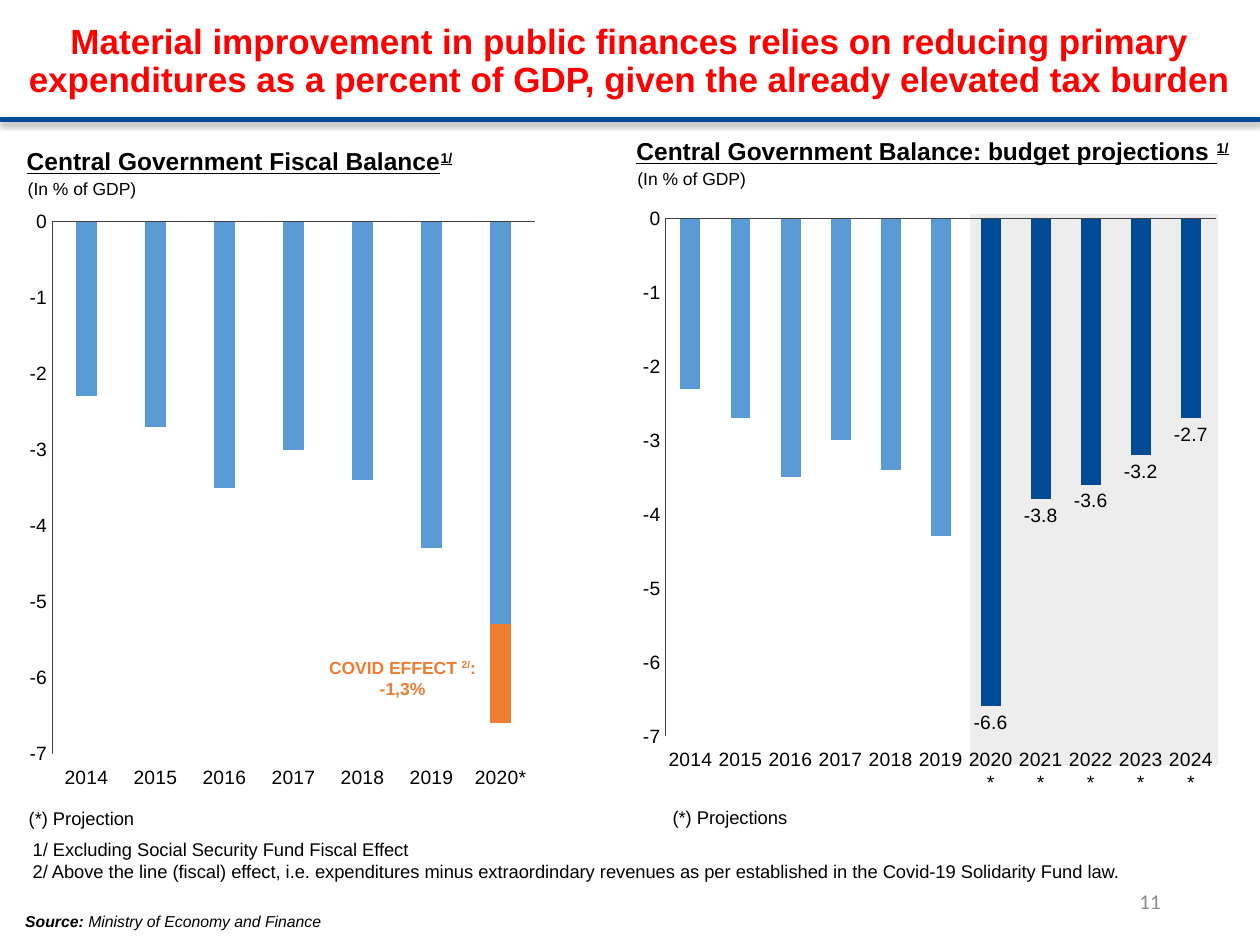
from dataclasses import dataclass

from lxml import etree
from pptx import Presentation
from pptx.chart.data import CategoryChartData
from pptx.dml.color import RGBColor
from pptx.enum.chart import XL_CHART_TYPE, XL_LABEL_POSITION, XL_TICK_LABEL_POSITION, XL_TICK_MARK
from pptx.enum.shapes import MSO_CONNECTOR, MSO_SHAPE
from pptx.enum.text import MSO_ANCHOR, MSO_AUTO_SIZE, PP_ALIGN
from pptx.oxml.ns import qn
from pptx.util import Cm, Pt

CLUSTERED, STACKED = XL_CHART_TYPE.COLUMN_CLUSTERED, XL_CHART_TYPE.COLUMN_STACKED
CENTER, RIGHT = PP_ALIGN.CENTER, PP_ALIGN.RIGHT
TOP, MIDDLE, BOTTOM = MSO_ANCHOR.TOP, MSO_ANCHOR.MIDDLE, MSO_ANCHOR.BOTTOM
NO_TICK, LABELS_LOW = XL_TICK_MARK.NONE, XL_TICK_LABEL_POSITION.LOW
OUTSIDE_END = XL_LABEL_POSITION.OUTSIDE_END

NORMAL_INSETS = (0.25, 0.13, 0.25, 0.13)
TIGHT_INSETS = (0.13, 0.08, 0.13, 0.08)
UNIT_INSETS = (0.15, 0, 0, 0)


@dataclass
class Theme:
    font: str = "Arial"
    number_font: str = "Calibri"
    text: str = "000000"
    title: str = "FF0000"
    navy: str = "004A96"
    blue: str = "5B9BD5"
    orange: str = "ED7D31"
    shade: str = "EDEDED"
    axis: str = "404040"
    muted: str = "8B8B8B"
    title_size: float = 20
    heading_size: float = 14
    number_size: float = 12
    chart_size: float = 11
    note_size: float = 10.5
    small_size: float = 10
    source_size: float = 9


def color(value):
    return RGBColor.from_string(value)


def add_span(para, text, font, size, fill, bold=False, italic=False,
             underline=False, raised=False):
    span = para.add_run()
    span.text = text
    span.font.name, span.font.size = font, Pt(size)
    span.font.color.rgb = color(fill)
    span.font.bold, span.font.italic, span.font.underline = bold, italic, underline
    if raised:
        span.font._element.set("baseline", "30000")


class Page:
    """Holds the theme and the current slide."""

    def __init__(self, deck, theme):
        self.theme = theme
        self.slide = deck.slides.add_slide(deck.slide_layouts[5])
        self.shapes = self.slide.shapes

    def fill_text(self, box, paras, size, fill=None, font=None, align=None,
                  anchor=TOP, insets=NORMAL_INSETS, spacing=None, before=0,
                  hanging=0, **style):
        """Each paragraph is a list of (text, style changes) pairs."""
        frame = box.text_frame
        frame.word_wrap, frame.auto_size = True, MSO_AUTO_SIZE.NONE
        frame.vertical_anchor = anchor
        (frame.margin_left, frame.margin_top,
         frame.margin_right, frame.margin_bottom) = map(Cm, insets)
        for index, spans in enumerate(paras):
            para = frame.add_paragraph() if index else frame.paragraphs[0]
            para.alignment, para.line_spacing = align, spacing
            para.space_before = Pt(before)
            if hanging:
                properties = para._p.get_or_add_pPr()
                properties.set("marL", str(Cm(hanging)))
                properties.set("indent", str(-Cm(hanging)))
            for text, changes in spans:
                add_span(para, text, font or self.theme.font, size,
                         fill or self.theme.text, **{**style, **changes})

    def title(self, text, *place):
        box = self.shapes.title
        box.left, box.top, box.width, box.height = map(Cm, place)
        self.fill_text(box, [[(text, {})]], self.theme.title_size, self.theme.title,
                       align=CENTER, anchor=MIDDLE, spacing=0.9, bold=True)

    def text(self, place, paras, size, **style):
        self.fill_text(self.shapes.add_textbox(*map(Cm, place)), paras, size, **style)

    def panel(self, *place, fill):
        box = self.shapes.add_shape(MSO_SHAPE.RECTANGLE, *map(Cm, place))
        box.shadow.inherit = False
        box.fill.solid()
        box.fill.fore_color.rgb = color(fill)
        box.line.fill.background()

    def rule(self, top, width):
        line = self.shapes.add_connector(MSO_CONNECTOR.STRAIGHT, 0, Cm(top), Cm(width), Cm(top))
        line.line.color.rgb, line.line.width = color(self.theme.navy), Pt(3)
        effects = etree.SubElement(line._element.spPr, qn("a:effectLst"))
        shadow = etree.SubElement(effects, qn("a:outerShdw"), blurRad=str(Pt(3.1)),
                                  dist=str(Pt(1.8)), dir="5400000", rotWithShape="0")
        shade = etree.SubElement(shadow, qn("a:srgbClr"), val="000000")
        etree.SubElement(shade, qn("a:alpha"), val="35000")

    def columns(self, place, kind, categories, series, gap, overlap, plot_area):
        """Series holds (values, colour) pairs; plot_area holds shares of the frame."""
        data = CategoryChartData()
        data.categories = categories
        for number, (values, _) in enumerate(series, 1):
            data.add_series(f"Series {number}", values)
        chart = self.shapes.add_chart(kind, *map(Cm, place), data).chart
        chart.has_legend = chart.has_title = False
        chart.font.name, chart.font.size = self.theme.font, Pt(self.theme.chart_size)
        chart.font.color.rgb = color(self.theme.text)
        plot = chart.plots[0]
        plot.gap_width, plot.overlap, plot.vary_by_categories = gap, overlap, False
        for bars, (_, fill) in zip(plot.series, series):
            bars.invert_if_negative = False
            bars.format.fill.solid()
            bars.format.fill.fore_color.rgb = color(fill)

        # Axes
        for axis, width in ((chart.category_axis, 0.75), (chart.value_axis, 0.5)):
            axis.major_tick_mark = axis.minor_tick_mark = NO_TICK
            axis.has_major_gridlines = False
            axis.format.line.color.rgb, axis.format.line.width = color(self.theme.axis), Pt(width)
        chart.category_axis.tick_label_position = LABELS_LOW
        scale = chart.value_axis
        scale.minimum_scale, scale.maximum_scale, scale.major_unit = -7, 0, 1
        scale.tick_labels.number_format = "General"
        scale.tick_labels.number_format_is_linked = False

        # Fixed plot area
        area = chart._chartSpace.chart.plotArea
        for old in area.findall(qn("c:layout")):
            area.remove(old)
        layout = etree.Element(qn("c:layout"))
        area.insert(0, layout)
        manual = etree.SubElement(layout, qn("c:manualLayout"))
        settings = [("layoutTarget", "inner"), ("xMode", "edge"), ("yMode", "edge")]
        for name, value in settings + list(zip("xywh", plot_area)):
            etree.SubElement(manual, qn(f"c:{name}"), val=str(value))
        return plot

    def highlight(self, bars, first, last, fill):
        bars.data_labels.show_value = False
        for index in range(first, last + 1):
            point = bars.points[index]
            point.format.fill.solid()
            point.format.fill.fore_color.rgb = color(fill)
            label = point.data_label
            label.position = OUTSIDE_END
            label.font.name, label.font.size = self.theme.font, Pt(self.theme.chart_size)
            label.font.color.rgb = color(self.theme.text)


def main():
    deck = Presentation()
    deck.slide_width, deck.slide_height = Cm(25.4), Cm(19.05)
    theme = Theme()
    page = Page(deck, theme)

    # Title and rule
    page.title("Material improvement in public finances relies on reducing primary "
               "expenditures as a percent of GDP, given the already elevated tax burden",
               -0.03, 0.48, 25.45, 1.55)
    page.rule(2.41, 25.4)

    # Charts, with the projection years shaded
    page.panel(19.56, 4.32, 5, 11.1, fill=theme.shade)
    actual = [-2.3, -2.7, -3.5, -3, -3.4, -4.3]
    years = [str(year) for year in range(2014, 2020)]
    projected = [f"{year}*" for year in range(2020, 2025)]
    plot = page.columns((12.73, 3.94, 12.01, 12.29), CLUSTERED, years + projected,
                        [(actual + [-6.6, -3.8, -3.6, -3.2, -2.7], theme.blue)],
                        150, -27, (0.057, 0.038, 0.924, 0.849))
    page.highlight(plot.series[0], 6, 10, theme.navy)
    page.columns((0.38, 4.01, 10.62, 12.12), STACKED, years + projected[:1],
                 [(actual + [-5.3], theme.blue), ([None] * 6 + [-1.3], theme.orange)],
                 219, 100, (0.063, 0.038, 0.917, 0.885))

    # Chart headings and projection notes
    for left, top, heading, note_place, note in (
            (0.41, 2.82, "Central Government Fiscal Balance",
             (0.33, 16.15), "(*) Projection"),
            (12.7, 2.62, "Central Government Balance: budget projections ",
             (13.31, 16.13), "(*) Projections")):
        page.text((left, top, 12.7, 0.84), [[(heading, {}), ("1/", {"raised": True})]],
                  theme.heading_size, anchor=MIDDLE, insets=TIGHT_INSETS,
                  bold=True, underline=True)
        page.text((left, top + 0.76, 7.06, 0.43), [[("(In % of GDP)", {})]],
                  theme.small_size, anchor=BOTTOM, insets=UNIT_INSETS,
                  before=2, hanging=0.64)
        page.text((*note_place, 3.84, 0.69), [[(note, {})]], theme.note_size)

    # Callout
    page.text((5.97, 13.11, 4.29, 1.09),
              [[("COVID EFFECT ", {}), ("2/", {"raised": True}), (":", {})],
               [("-1,3%", {})]],
              theme.small_size, fill=theme.orange, align=CENTER, bold=True)

    # Footnotes, source and page number
    page.text((0.41, 16.76, 22.94, 1.14),
              [[("1/ Excluding Social Security Fund Fiscal Effect", {})],
               [("2/ Above the line (fiscal) effect, i.e. expenditures minus extraordindary "
                 "revenues as per established in the Covid-19 Solidarity Fund law.", {})]],
              theme.note_size)
    page.text((0.38, 18.36, 12.34, 0.48),
              [[("Source:", {"bold": True}), (" Ministry of Economy and Finance", {})]],
              theme.source_size, anchor=BOTTOM, insets=TIGHT_INSETS,
              spacing=0.9, before=0.5, italic=True)
    page.text((17.93, 17.65, 5.72, 1.02), [[("11", {})]], theme.number_size,
              fill=theme.muted, font=theme.number_font, align=RIGHT, anchor=MIDDLE)

    deck.save("out.pptx")


if __name__ == "__main__":
    main()
